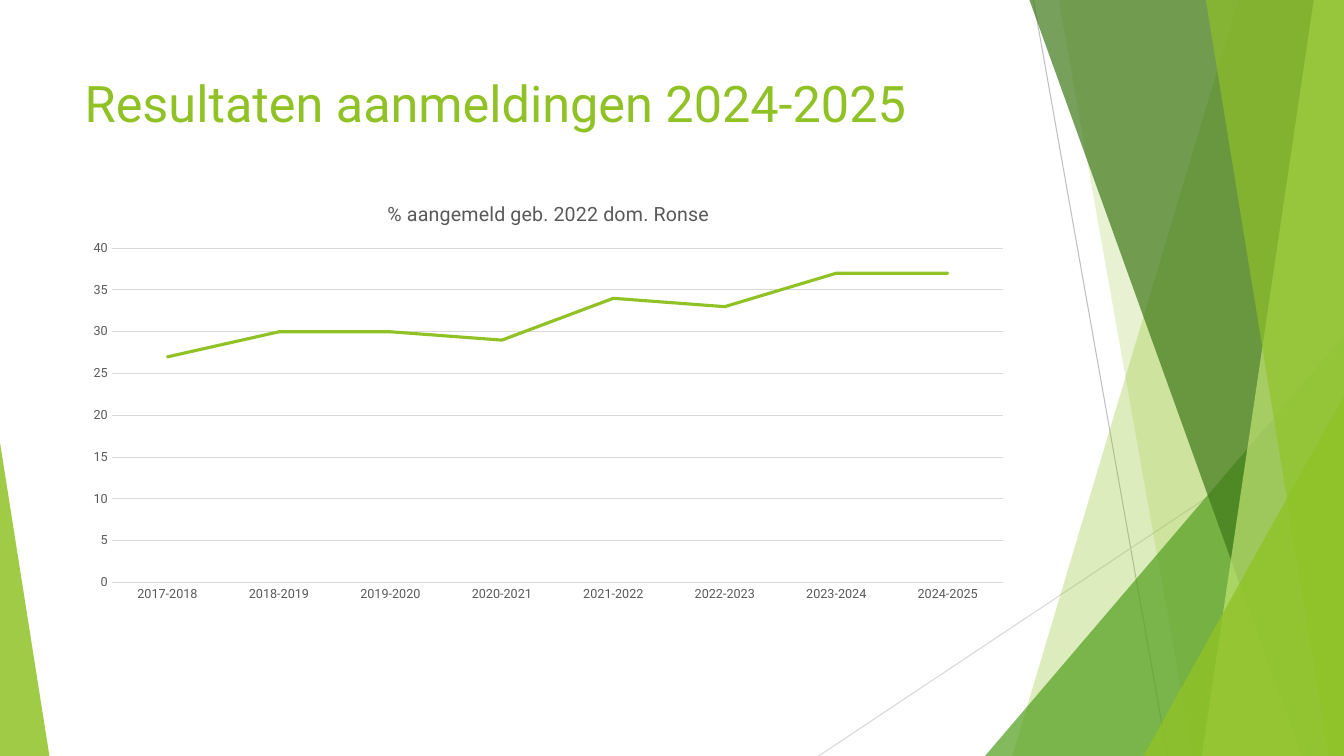
"""Build the slide with the registration results line chart."""
import pptx
import pptx.chart.data
import pptx.dml.color
import pptx.enum.chart
import pptx.enum.shapes
import pptx.enum.text
import pptx.oxml.ns
import pptx.oxml.xmlchemy
import pptx.util
from pptx.util import Inches

GREEN, GREY, LIGHT = "90C226", "595959", "D9D9D9"
W, H = 13.33, 7.5


def paint(fmt, color, alpha=100):
    """Give a fill, line or font a solid colour, with opacity in percent."""
    if hasattr(fmt, "solid"):
        fmt.solid()
    target = fmt.fore_color if hasattr(fmt, "fore_color") else fmt.color
    target.rgb = pptx.dml.color.RGBColor.from_string(color)
    if alpha < 100:
        clr = fmt._xPr.find(".//" + pptx.oxml.ns.qn("a:srgbClr"))
        a = pptx.oxml.xmlchemy.OxmlElement("a:alpha")
        a.set("val", str(alpha * 1000))
        clr.append(a)


def style(font, size, color):
    """Set the typeface, size and colour of a font."""
    font.name = "Roboto"
    font.size = pptx.util.Pt(size)
    font.bold = False
    paint(font, color)


prs = pptx.Presentation()
prs.slide_width, prs.slide_height = Inches(W), Inches(H)
s = prs.slides.add_slide(prs.slide_layouts[5])

rays = [(10.25, 0, 11.58, H, "BFBFBF"), (W, 4.03, 8.12, H, LIGHT)]
for x1, y1, x2, y2, color in rays:
    line = s.shapes.add_connector(pptx.enum.shapes.MSO_CONNECTOR.STRAIGHT,
                                  Inches(x1), Inches(y1), Inches(x2), Inches(y2))
    paint(line.line, color)
    line.line.width = pptx.util.Pt(0.75)
    line._element.spPr.append(pptx.oxml.xmlchemy.OxmlElement("a:effectLst"))

bands = [
    ("panel", 12.28, 10.04, GREEN, 30),
    ("panel", 10.5, 11.83, GREEN, 20),
    ("triangle", 9.77, 3.33, 3.56, 1, "54A021", 72),
    ("panel", 10.21, 12.91, "3F7819", 70),
    ("panel", 13.03, 11.92, "C0E474", 70),
    ("panel", 11.96, 13.18, GREEN, 65),
    ("triangle", 11.34, 3.93, 1.99, 1, GREEN, 80),
    ("triangle", 0, 4.39, 0.49, 0, GREEN, 85),
]
for kind, *geometry, color, alpha in bands:
    if kind == "panel":
        top_x, bottom_x = geometry
        builder = s.shapes.build_freeform(Inches(top_x), 0)
        corners = [(W, 0), (W, H), (bottom_x, H)]
        builder.add_line_segments([(Inches(x), Inches(y)) for x, y in corners], close=True)
        sp = builder.convert_to_shape()
    else:
        left, top, width, apex = geometry
        sp = s.shapes.add_shape(pptx.enum.shapes.MSO_SHAPE.ISOSCELES_TRIANGLE,
                                Inches(left), Inches(top), Inches(width), Inches(H - top))
        sp.adjustments[0] = apex
    paint(sp.fill, color, alpha)
    sp.line.fill.background()
    sp.shadow.inherit = False

title = s.shapes.title
title.left, title.top, title.width, title.height = map(Inches, (0.74, 0.67, 9.4, 1.44))
tf = title.text_frame
tf.text = "Resultaten aanmeldingen 2024-2025"
tf.word_wrap = True
tf.vertical_anchor = pptx.enum.text.MSO_ANCHOR.TOP
p = tf.paragraphs[0]
p.alignment = pptx.enum.text.PP_ALIGN.LEFT
style(p.runs[0].font, 36, GREEN)

data = pptx.chart.data.CategoryChartData()
data.categories = [f"{year}-{year + 1}" for year in range(2017, 2025)]
data.add_series("Series 1", (27, 30, 30, 29, 34, 33, 37, 37))
chart = s.shapes.add_chart(pptx.enum.chart.XL_CHART_TYPE.LINE, Inches(0.74), Inches(1.81),
                           Inches(9.4), Inches(4.24), data).chart
style(chart.font, 10, "000000")
chart.has_legend = False
chart.has_title = True
chart.chart_title.include_in_layout = False
p = chart.chart_title.text_frame.paragraphs[0]
p.text = "% aangemeld geb. 2022 dom. Ronse"
style(p.runs[0].font, 14, GREY)

cat_axis, val_axis = chart.category_axis, chart.value_axis
for axis in (cat_axis, val_axis):
    axis.major_tick_mark = axis.minor_tick_mark = pptx.enum.chart.XL_TICK_MARK.NONE
    style(axis.tick_labels.font, 9, GREY)
val_axis.minimum_scale, val_axis.maximum_scale, val_axis.major_unit = 0, 40, 5
val_axis.format.line.fill.background()
for line in (cat_axis.format.line, val_axis.major_gridlines.format.line):
    paint(line, LIGHT)
    line.width = pptx.util.Pt(0.75)

chart.plots[0].vary_by_categories = False
series = chart.plots[0].series[0]
series.smooth = False
series.marker.style = pptx.enum.chart.XL_MARKER_STYLE.NONE
paint(series.format.line, GREEN)
series.format.line.width = pptx.util.Pt(2.25)
series.format.line._ln.set("cap", "rnd")

prs.save("out.pptx")
